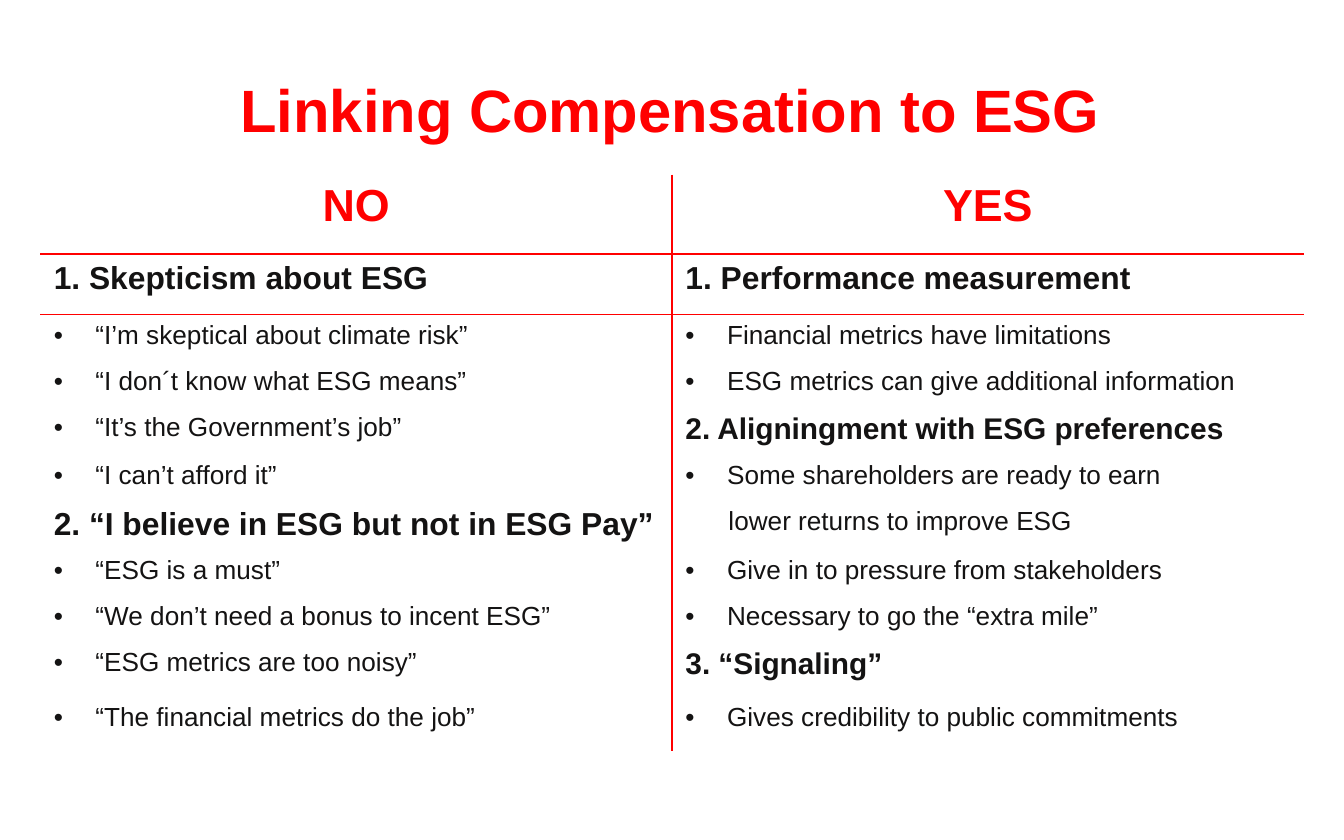
from dataclasses import dataclass

from lxml import etree
from pptx import Presentation, util as u
from pptx.dml.color import RGBColor
from pptx.enum import text
from pptx.oxml import ns

RED = RGBColor(0xFF, 0x00, 0x00)
INK = RGBColor(0x14, 0x13, 0x13)
WHITE = RGBColor(0xFF, 0xFF, 0xFF)
FONT = "Arial"
PLAIN_TABLE = "{2D5ABB26-0587-4C30-8999-92F81FD0307C}"
WIDTH, HEIGHT = u.Inches(10), u.Inches(6.25)
BULLET_INDENT = u.Inches(0.31)
ROW_HEIGHTS = (0.59, 0.45, 0.34, 0.34, 0.36, 0.34, 0.37, 0.34, 0.34, 0.41, 0.41)


@dataclass(frozen=True)
class Entry:
    wording: str
    size: float = 14
    bold: bool = False
    color: RGBColor = INK
    bullet: bool = False
    centered: bool = False
    indent: int = 0


def header(wording: str) -> Entry:
    return Entry(wording, 24, True, RED, centered=True)


def heading(wording: str, size: float) -> Entry:
    return Entry(wording, size, True)


def point(wording: str) -> Entry:
    return Entry(wording, bullet=True, indent=BULLET_INDENT)


NO_COLUMN = (
    header("NO"),
    heading("1. Skepticism about ESG", 17),
    point("“I’m skeptical about climate risk”"),
    point("“I don´t know what ESG means”"),
    point("“It’s the Government’s job”"),
    point("“I can’t afford it”"),
    heading("2. “I believe in ESG but not in ESG Pay”", 17),
    point("“ESG is a must”"),
    point("“We don’t need a bonus to incent ESG”"),
    point("“ESG metrics are too noisy”"),
    point("“The financial metrics do the job”"),
)
YES_COLUMN = (
    header("YES"),
    heading("1. Performance measurement", 17),
    point("Financial metrics have limitations"),
    point("ESG metrics can give additional information"),
    heading("2. Aligningment with ESG preferences", 16),
    point("Some shareholders are ready to earn"),
    Entry("lower returns to improve ESG", indent=u.Inches(0.32)),
    point("Give in to pressure from stakeholders"),
    point("Necessary to go the “extra mile”"),
    heading("3. “Signaling”", 16),
    point("Gives credibility to public commitments"),
)


def write_entry(frame, entry: Entry) -> None:
    frame.text = entry.wording
    paragraph = frame.paragraphs[0]
    paragraph.alignment = text.PP_ALIGN.CENTER if entry.centered else text.PP_ALIGN.LEFT
    font = paragraph.runs[0].font
    font.name, font.size, font.bold = FONT, u.Pt(entry.size), entry.bold
    font.color.rgb = entry.color
    properties = paragraph._p.get_or_add_pPr()
    properties.set("marL", str(int(entry.indent)))
    properties.set("indent", str(-int(entry.indent) if entry.bullet else 0))
    if entry.bullet:
        etree.SubElement(properties, ns.qn("a:buFont"), typeface=FONT)
        etree.SubElement(properties, ns.qn("a:buChar"), char="•")


def draw_border(cell, side: str) -> None:
    properties = cell._tc.get_or_add_tcPr()
    line = etree.SubElement(properties, ns.qn(f"a:ln{side}"), w=str(int(u.Pt(1))))
    fill = etree.SubElement(line, ns.qn("a:solidFill"))
    etree.SubElement(fill, ns.qn("a:srgbClr"), val=str(RED))


def add_title(slide, wording: str) -> None:
    title = slide.shapes.title
    title.left, title.top = int(WIDTH * 0.054), int(HEIGHT * 0.056)
    title.width, title.height = int(WIDTH * 0.89), int(HEIGHT * 0.147)
    write_entry(title.text_frame, Entry(wording, 32, True, RED, centered=True))
    title.text_frame.vertical_anchor = text.MSO_ANCHOR.MIDDLE
    title.text_frame.auto_size = text.MSO_AUTO_SIZE.NONE


def add_comparison(slide, columns: tuple) -> None:
    frame = slide.shapes.add_table(
        len(ROW_HEIGHTS), len(columns), int(WIDTH * 0.03), int(HEIGHT * 0.208),
        int(WIDTH * 0.94), u.Inches(sum(ROW_HEIGHTS)))
    table = frame.table
    table.first_row = table.horz_banding = False
    table._tbl.tblPr.find(ns.qn("a:tableStyleId")).text = PLAIN_TABLE
    for row, height in zip(table.rows, ROW_HEIGHTS):
        row.height = u.Inches(height)
    for column_index, entries in enumerate(columns):
        for row_index, entry in enumerate(entries):
            cell = table.cell(row_index, column_index)
            write_entry(cell.text_frame, entry)
            draw_border(cell, "L" if column_index else "R")
            if row_index == 1:
                draw_border(cell, "T")
            if row_index == 0:
                draw_border(cell, "B")
            cell.fill.background()


def main() -> None:
    presentation = Presentation()
    presentation.slide_width, presentation.slide_height = WIDTH, HEIGHT
    slide = presentation.slides.add_slide(presentation.slide_layouts[5])
    slide.background.fill.solid()
    slide.background.fill.fore_color.rgb = WHITE
    add_title(slide, "Linking Compensation to ESG")
    add_comparison(slide, (NO_COLUMN, YES_COLUMN))
    presentation.save("out.pptx")


if __name__ == "__main__":
    main()
